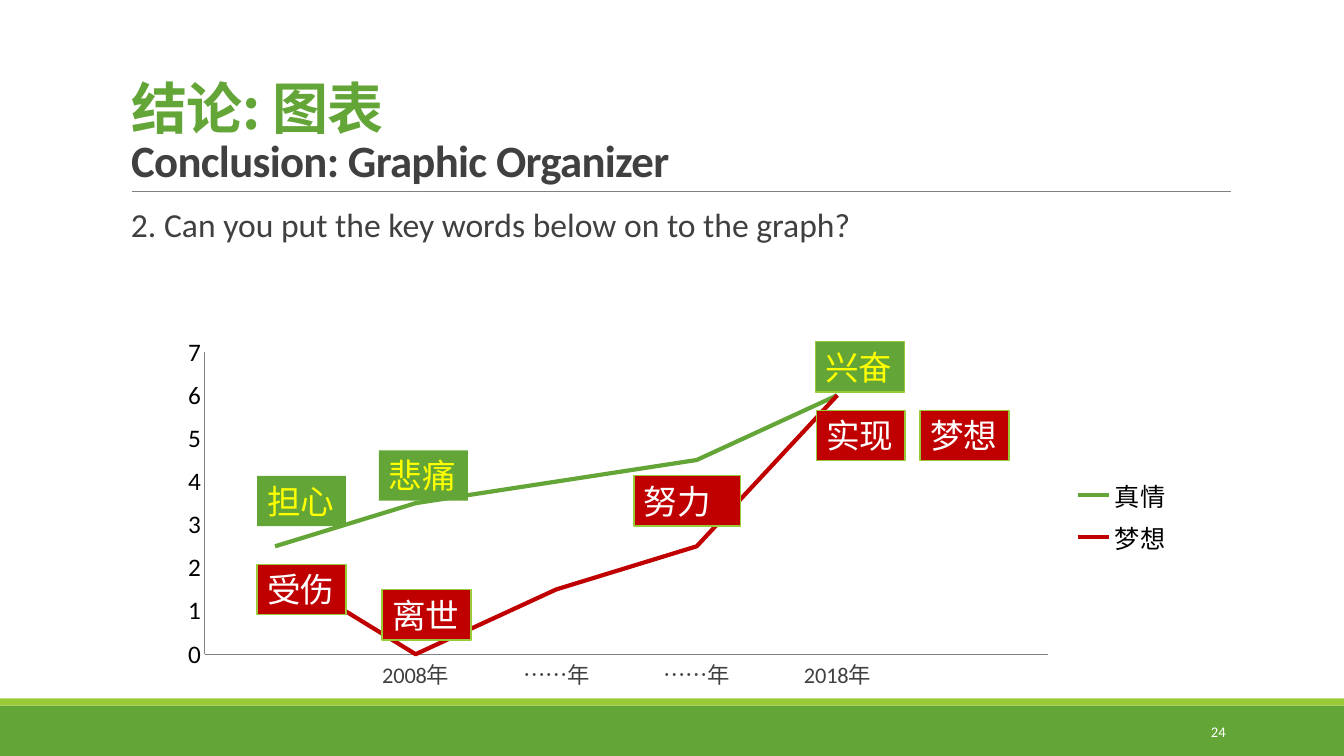
from lxml import etree
from pptx import Presentation
from pptx.chart.data import CategoryChartData
from pptx.dml.color import RGBColor
from pptx.enum.chart import XL_CHART_TYPE as ChartType, XL_LEGEND_POSITION as LegendPosition
from pptx.enum.chart import XL_MARKER_STYLE as MarkerStyle, XL_TICK_MARK as TickMark
from pptx.enum.shapes import MSO_CONNECTOR as Connector, MSO_SHAPE as Shape
from pptx.enum.text import MSO_ANCHOR as Anchor, MSO_AUTO_SIZE as AutoSize, PP_ALIGN as Align
from pptx.oxml import parse_xml
from pptx.oxml.ns import nsdecls, qn
from pptx.util import Cm, Pt

GREEN = RGBColor(0x63, 0xA5, 0x37)
LIME = RGBColor(0x99, 0xCB, 0x38)
RED = RGBColor(0xC0, 0x00, 0x00)
YELLOW = RGBColor(0xFF, 0xFF, 0x00)
WHITE = RGBColor(0xFF, 0xFF, 0xFF)
BLACK = RGBColor(0x00, 0x00, 0x00)
DARK = RGBColor(0x40, 0x40, 0x40)
GREY = RGBColor(0x80, 0x80, 0x80)
LATIN, CHINESE = "Calibri", "Noto Sans CJK SC"
SLIDE_WIDTH = 33.87

# Key words: text, left, top, width, fill, font colour, has border
KEY_WORDS = [
    ("受伤", 6.48, 14.22, 2.24, RED, WHITE, True),
    ("离世", 9.63, 14.86, 2.24, RED, WHITE, True),
    ("兴奋", 20.55, 8.61, 2.24, GREEN, YELLOW, True),
    ("梦想", 23.19, 10.34, 2.24, RED, WHITE, True),
    ("悲痛", 9.55, 11.35, 2.24, GREEN, YELLOW, False),
    ("担心", 6.48, 11.99, 2.24, GREEN, YELLOW, False),
    ("努力", 15.98, 11.99, 2.69, RED, WHITE, True),
    ("实现", 20.57, 10.34, 2.24, RED, WHITE, True),
]
CATEGORIES = ["", "2008年", "……年", "……年", "2018年", ""]
SERIES = [
    ("真情", [2.5, 3.5, 4, 4.5, 6, None], GREEN),
    ("梦想", [2, 0, 1.5, 2.5, 6, None], RED),
]


def style_font(font, size, color, name=LATIN, bold=False):
    font.size, font.name, font.bold = Pt(size), name, bold
    font.color.rgb = color


def add_run(paragraph, text, size, color, name=LATIN, bold=False):
    run = paragraph.add_run()
    run.text = text
    style_font(run.font, size, color, name, bold)
    east_asian = etree.SubElement(run.font._element, qn("a:ea"))
    east_asian.set("typeface", CHINESE)
    return run


def place(shape, left, top, width, height):
    shape.left, shape.top = Cm(left), Cm(top)
    shape.width, shape.height = Cm(width), Cm(height)


def add_box(slide, left, top, width, height, fill, line=None):
    shape = slide.shapes.add_shape(Shape.RECTANGLE, Cm(left), Cm(top), Cm(width), Cm(height))
    shape.shadow.inherit = False
    shape.fill.solid()
    shape.fill.fore_color.rgb = fill
    if line is None:
        shape.line.fill.background()
    else:
        shape.line.color.rgb = line
        shape.line.width = Pt(1)
    return shape


def add_rule(slide, left, right, top):
    rule = slide.shapes.add_connector(Connector.STRAIGHT, Cm(left), Cm(top), Cm(right), Cm(top))
    rule.line.color.rgb = GREY
    rule.line.width = Pt(0.5)
    etree.SubElement(rule._element.spPr, qn("a:effectLst"))


def fill_title(title):
    place(title, 3.05, 0.79, 27.94, 4.04)
    frame = title.text_frame
    frame.auto_size, frame.vertical_anchor = AutoSize.NONE, Anchor.BOTTOM
    paragraph = frame.paragraphs[0]
    paragraph.alignment, paragraph.line_spacing = Align.LEFT, 0.85
    chinese = add_run(paragraph, "结论: 图表", 40, GREEN, CHINESE, True)
    paragraph.add_line_break()
    english = add_run(paragraph, "Conclusion: Graphic Organizer", 32, DARK, LATIN, True)
    for run in (chinese, english):
        run.font._element.set("spc", "-50")


def fill_question(body):
    place(body, 3.05, 5.13, 29.41, 2.79)
    frame = body.text_frame
    frame.auto_size, frame.vertical_anchor = AutoSize.NONE, Anchor.TOP
    frame.margin_left = frame.margin_right = 0
    paragraph = frame.paragraphs[0]
    paragraph.line_spacing = 0.9
    paragraph.space_before, paragraph.space_after = Pt(12), Pt(2)
    add_run(paragraph, "2. Can you put the key words below on to the graph?", 24, DARK)
    # Blank bullet with a hanging indent
    properties = paragraph._p.get_or_add_pPr()
    properties.set("marL", str(Cm(0.25)))
    properties.set("indent", str(-Cm(0.25)))
    properties.append(parse_xml(
        f'<a:buClr {nsdecls("a")}><a:srgbClr val="{LIME}"/></a:buClr>'))
    properties.append(parse_xml(f'<a:buChar {nsdecls("a")} char=" "/>'))


def style_axis(axis, size, color):
    axis.has_major_gridlines = False
    axis.major_tick_mark = axis.minor_tick_mark = TickMark.NONE
    axis.format.line.color.rgb = GREY
    axis.format.line.width = Pt(0.75)
    style_font(axis.tick_labels.font, size, color)


def add_line_chart(slide):
    data = CategoryChartData()
    data.categories = CATEGORIES
    for name, values, _ in SERIES:
        data.add_series(name, values)
    chart = slide.shapes.add_chart(
        ChartType.LINE, Cm(4.24), Cm(8.31), Cm(25.55), Cm(9.4), data).chart
    style_font(chart.font, 18, BLACK)
    chart.has_title = False
    chart.has_legend = True
    chart.legend.position = LegendPosition.RIGHT
    chart.legend.include_in_layout = False
    style_font(chart.legend.font, 18, BLACK)
    style_axis(chart.category_axis, 16, DARK)
    style_axis(chart.value_axis, 18, BLACK)
    chart.value_axis.minimum_scale, chart.value_axis.maximum_scale = 0, 7
    chart.value_axis.major_unit = 1

    plot = chart.plots[0]
    plot.vary_by_categories = False
    for series, (_, _, color) in zip(plot.series, SERIES):
        series.smooth = False
        series.marker.style = MarkerStyle.NONE
        series.format.line.color.rgb = color
        series.format.line.width = Pt(3)

    # Fixed inner plot area
    plot_area = chart._chartSpace.chart.plotArea
    for old_layout in plot_area.findall(qn("c:layout")):
        plot_area.remove(old_layout)
    sizes = "".join(f'<c:{key} val="{value}"/>' for key, value in
                    (("x", 0.036), ("y", 0.06), ("w", 0.832), ("h", 0.81)))
    plot_area.insert(0, parse_xml(
        f'<c:layout {nsdecls("c")}><c:manualLayout><c:layoutTarget val="inner"/>'
        f'<c:xMode val="edge"/><c:yMode val="edge"/>{sizes}</c:manualLayout></c:layout>'))


def add_key_word(slide, text, left, top, width, fill, color, bordered):
    shape = add_box(slide, left, top, width, 1.27, fill, LIME if bordered else None)
    frame = shape.text_frame
    frame.word_wrap = width > 2.24
    frame.auto_size, frame.vertical_anchor = AutoSize.SHAPE_TO_FIT_TEXT, Anchor.TOP
    paragraph = frame.paragraphs[0]
    paragraph.alignment = Align.LEFT
    add_run(paragraph, text, 24, color)


def add_page_number(slide, text):
    frame = slide.shapes.add_textbox(Cm(27.51), Cm(17.93), Cm(3.63), Cm(1.02)).text_frame
    frame.word_wrap = True
    frame.vertical_anchor = Anchor.MIDDLE
    paragraph = frame.paragraphs[0]
    paragraph.alignment = Align.RIGHT
    add_run(paragraph, text, 10.5, WHITE)


def main():
    presentation = Presentation()
    presentation.slide_width, presentation.slide_height = Cm(SLIDE_WIDTH), Cm(19.05)
    slide = presentation.slides.add_slide(presentation.slide_layouts[1])

    # Footer bands and rule under the title
    add_box(slide, 0, 17.78, SLIDE_WIDTH, 1.27, GREEN)
    add_box(slide, 0, 17.6, SLIDE_WIDTH, 0.18, LIME)
    add_rule(slide, 3.33, 31.01, 4.83)

    # Heading and question
    fill_title(slide.shapes.title)
    fill_question(slide.placeholders[1])

    # Graph with its key words
    add_line_chart(slide)
    for key_word in KEY_WORDS:
        add_key_word(slide, *key_word)
    add_page_number(slide, "24")
    presentation.save("out.pptx")


if __name__ == "__main__":
    main()
